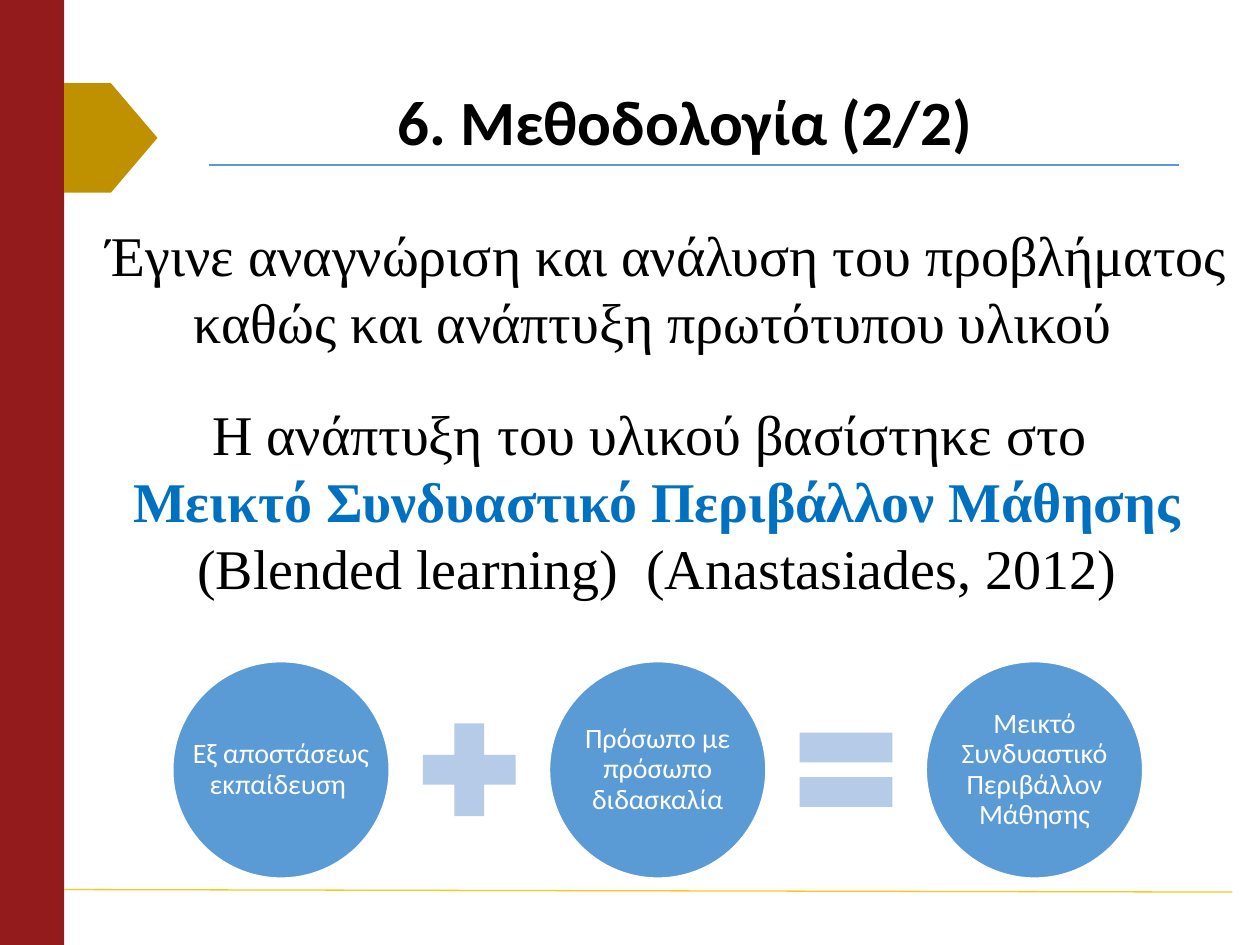
"""Build the methodology slide: two statements and a blended-learning equation."""
from lxml import etree
from pptx import Presentation
from pptx import util as u
from pptx.dml.color import RGBColor
from pptx.enum import shapes, text
from pptx.oxml.ns import qn

BLACK = RGBColor(0x00, 0x00, 0x00)
WHITE = RGBColor(0xFF, 0xFF, 0xFF)
RED = RGBColor(0x93, 0x1B, 0x1B)
GOLD = RGBColor(0xBF, 0x90, 0x00)
YELLOW = RGBColor(0xFF, 0xC6, 0x1A)
BLUE = RGBColor(0x5B, 0x9B, 0xD5)
PALE_BLUE = RGBColor(0xB5, 0xCB, 0xE7)
STRONG_BLUE = RGBColor(0x00, 0x70, 0xC0)
BODY_FONT = "Times New Roman"
LABEL_FONT = "Calibri"

TITLE = "6. Μεθοδολογία (2/2)"
STATEMENTS = [
    ((0.73, 1.7, 9.13, 1.18), [
        ("Έγινε αναγνώριση και ανάλυση του προβλήματος "
         "καθώς και ανάπτυξη πρωτότυπου υλικού  ", BLACK, False)]),
    ((0.67, 3.12, 9.09, 1.72), [
        ("Η ανάπτυξη του υλικού βασίστηκε στο ", BLACK, False),
        ("Μεικτό Συνδυαστικό Περιβάλλον Μάθησης", STRONG_BLUE, True),
        ("(Blended learning)  (Anastasiades, 2012)", BLACK, False)]),
]
TERMS = ["Εξ αποστάσεως εκπαίδευση ", "Πρόσωπο με πρόσωπο διδασκαλία",
         "Μεικτό Συνδυαστικό Περιβάλλον Μάθησης"]
OPERATORS = [shapes.MSO_SHAPE.MATH_PLUS, shapes.MSO_SHAPE.MATH_EQUAL]
RULES = [((1.66, 1.31, 9.36, 1.31), BLUE), ((0.51, 7.06, 9.78, 7.08), YELLOW)]

EQUATION_LEFT, EQUATION_TOP = 1.37, 5.25
CIRCLE, OPERATOR, STEP = 1.72, 1, 2.99


def inches(box):
    return [u.Inches(length) for length in box]


def write(frame, paragraphs, font, size, spacing=None, inset=None,
          anchor=text.MSO_ANCHOR.TOP):
    frame.word_wrap = True
    frame.auto_size = text.MSO_AUTO_SIZE.NONE
    frame.vertical_anchor = anchor
    if inset is not None:
        frame.margin_left = frame.margin_right = u.Inches(inset)
        frame.margin_top = frame.margin_bottom = u.Inches(inset)
    for index, (words, color, bold) in enumerate(paragraphs):
        paragraph = frame.add_paragraph() if index else frame.paragraphs[0]
        paragraph.alignment = text.PP_ALIGN.CENTER
        if spacing:
            paragraph.line_spacing = spacing
        run = paragraph.add_run()
        run.text = words
        run.font.name, run.font.size = font, u.Pt(size)
        run.font.bold, run.font.color.rgb = bold, color


def draw(slide, preset, box, fill, outline=None):
    shape = slide.shapes.add_shape(preset, *inches(box))
    shape.shadow.inherit = False
    shape.fill.solid()
    shape.fill.fore_color.rgb = fill
    if outline is None:
        shape.line.fill.background()
    else:
        shape.line.color.rgb = outline
        shape.line.width = u.Pt(1)


def rule(slide, ends, color):
    line = slide.shapes.add_connector(shapes.MSO_CONNECTOR.STRAIGHT, *inches(ends))
    line.line.color.rgb = color
    line.line.width = u.Pt(0.75)
    etree.SubElement(line._element.spPr, qn("a:effectLst"))


def equation(slide):
    for index, term in enumerate(TERMS):
        left = EQUATION_LEFT + index * STEP
        box = (left, EQUATION_TOP, CIRCLE, CIRCLE)
        draw(slide, shapes.MSO_SHAPE.OVAL, box, BLUE, WHITE)
        label = slide.shapes.add_textbox(*inches(box))
        write(label.text_frame, [(term, WHITE, False)], LABEL_FONT, 16,
              spacing=0.9, inset=0.02, anchor=text.MSO_ANCHOR.MIDDLE)
        if index < len(OPERATORS):
            gap = (STEP - CIRCLE - OPERATOR) / 2
            drop = (CIRCLE - OPERATOR) / 2
            draw(slide, OPERATORS[index],
                 (left + CIRCLE + gap, EQUATION_TOP + drop, OPERATOR, OPERATOR), PALE_BLUE)


def main():
    deck = Presentation()
    deck.slide_width, deck.slide_height = inches((10, 7.5))
    slide = deck.slides.add_slide(deck.slide_layouts[5])

    draw(slide, shapes.MSO_SHAPE.RECTANGLE, (0, 0, 0.51, 7.5), RED)
    for ends, color in RULES:
        rule(slide, ends, color)
    draw(slide, shapes.MSO_SHAPE.PENTAGON, (0.51, 0.66, 0.74, 0.87), GOLD)

    title = slide.shapes.title
    title.left, title.top, title.width, title.height = inches((1.46, 0.68, 7.95, 0.63))
    write(title.text_frame, [(TITLE, BLACK, True)], LABEL_FONT, 36,
          spacing=0.9, anchor=text.MSO_ANCHOR.MIDDLE)

    for box, paragraphs in STATEMENTS:
        statement = slide.shapes.add_textbox(*inches(box))
        write(statement.text_frame, paragraphs, BODY_FONT, 32)

    equation(slide)
    deck.save("out.pptx")


if __name__ == "__main__":
    main()
